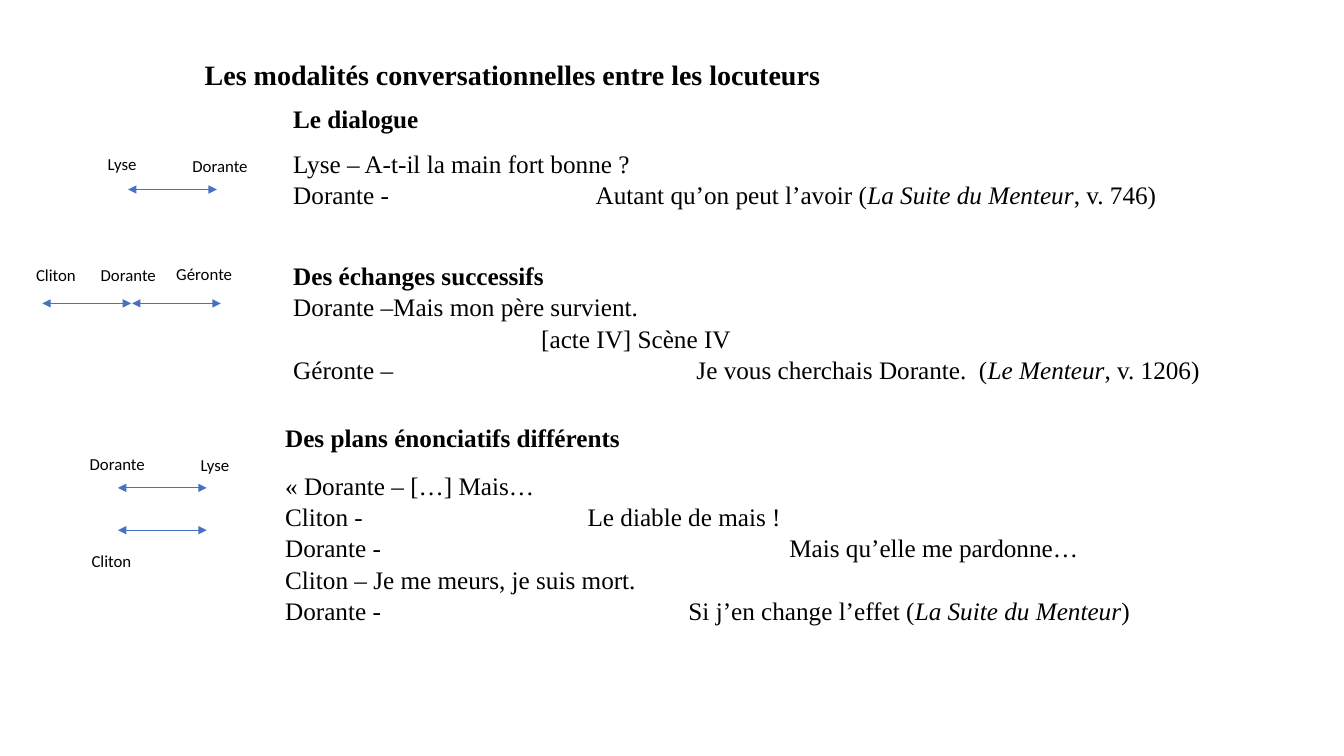
from lxml import etree
from pptx import Presentation
from pptx.dml.color import RGBColor
from pptx.enum.shapes import MSO_CONNECTOR
from pptx.enum.text import MSO_ANCHOR, MSO_AUTO_SIZE, PP_ALIGN
from pptx.oxml.ns import qn
from pptx.util import Pt

PX = 9144
STRAIGHT = MSO_CONNECTOR.STRAIGHT
TOP = MSO_ANCHOR.TOP
NO_FIT = MSO_AUTO_SIZE.NONE
LEFT, JUSTIFY = PP_ALIGN.LEFT, PP_ALIGN.JUSTIFY
COLORS = {"text": "000000", "arrow": "4472C4"}
SERIF, SANS = "Times New Roman", "Calibri"
TITLE = {"name": SERIF, "size": Pt(20), "bold": True}
HEADING = {"name": SERIF, "size": Pt(18), "bold": True}
BODY = {"name": SERIF, "size": Pt(18), "bold": False}
LABEL = {"name": SANS, "size": Pt(12), "bold": False}
TAB_STOPS = range(100, 600, 100)
ARROW_LENGTH = 88

DIALOGUE = [
    ("Lyse – A-t-il la main fort bonne ?", BODY),
    ("Dorante - \t\tAutant qu’on peut l’avoir (*La Suite du Menteur*, v. 746)", BODY),
]
EXCHANGES = [
    ("Des échanges successifs", HEADING),
    ("Dorante –Mais mon père survient.", BODY),
    ("[acte IV] Scène IV ", BODY),
    ("Géronte – \t\t\tJe vous cherchais Dorante.  (*Le Menteur*, v. 1206)", BODY),
]
PLANES = [
    ("« Dorante – […] Mais…", BODY),
    ("Cliton -\t\t\tLe diable de mais !", BODY),
    ("Dorante -\t\t\t\t\tMais qu’elle me pardonne…", BODY),
    ("Cliton – Je me meurs, je suis mort. ", BODY),
    ("Dorante -\t\t\t\tSi j’en change l’effet (*La Suite du Menteur*)", BODY),
]
LABELS = [
    ("Lyse", 97, 148, 49), ("Dorante", 181, 150, 75),
    ("Cliton", 26, 258, 60), ("Dorante", 90, 258, 75), ("Géronte", 165, 257, 76),
    ("Dorante", 79, 445, 75), ("Lyse", 189, 446, 49), ("Cliton", 81, 541, 60),
]
ARROWS = [(127, 188), (42, 301), (131, 301), (117, 484), (117, 526)]


def set_attributes(target, values):
    for name, value in values.items():
        setattr(target, name, value)


def place(sp, left, top, width, height):
    set_attributes(sp, {"left": left * PX, "top": top * PX,
                        "width": width * PX, "height": height * PX})


def add_tab_stops(p):
    tabs = etree.SubElement(p._p.get_or_add_pPr(), qn("a:tabLst"))
    for stop in TAB_STOPS:
        etree.SubElement(tabs, qn("a:tab"), pos=str(stop * PX), algn="l")


def write_paragraph(p, text, font, align, spacing):
    set_attributes(p, {"alignment": align, "line_spacing": spacing})
    if "\t" in text:
        add_tab_stops(p)
    for i, part in enumerate(text.split("*")):
        r = p.add_run()
        r.text = part
        set_attributes(r.font, {**font, "italic": i % 2 == 1})
        r.font.color.rgb = RGBColor.from_string(COLORS["text"])


def write_text(sp, lines, align=LEFT, wrap=False, spacing=1.0):
    tf = sp.text_frame
    set_attributes(tf, {
        "word_wrap": wrap, "auto_size": NO_FIT, "vertical_anchor": TOP,
        "margin_left": 10 * PX, "margin_right": 10 * PX,
        "margin_top": 5 * PX, "margin_bottom": 5 * PX,
    })
    for i, (text, font) in enumerate(lines):
        p = tf.add_paragraph() if i else tf.paragraphs[0]
        write_paragraph(p, text, font, align, spacing)


def add_text(s, box, lines, **layout):
    sp = s.shapes.add_textbox(*(v * PX for v in box))
    write_text(sp, lines, **layout)
    return sp


def add_double_arrow(s, left, top):
    line = s.shapes.add_connector(STRAIGHT, left * PX, top * PX,
                                  (left + ARROW_LENGTH) * PX, top * PX)
    line.line.color.rgb = RGBColor.from_string(COLORS["arrow"])
    line.line.width = Pt(0.5)
    ln = line.line._get_or_add_ln()
    for end in ("a:headEnd", "a:tailEnd"):
        etree.SubElement(ln, qn(end), type="triangle")
    etree.SubElement(line._element.spPr, qn("a:effectLst"))


def main():
    prs = Presentation()
    prs.slide_width, prs.slide_height = 1333 * PX, 750 * PX
    s = prs.slides.add_slide(prs.slide_layouts[5])

    title = s.shapes.title
    place(title, 193, 52, 642, 44)
    write_text(title, [("Les modalités conversationnelles entre les locuteurs", TITLE)])

    add_text(s, (281, 98, 146, 40), [("Le dialogue", HEADING)])
    add_text(s, (281, 141, 879, 71), DIALOGUE, spacing=1.04)
    exchanges = add_text(s, (281, 252, 1040, 162), EXCHANGES,
                         align=JUSTIFY, wrap=True, spacing=1.04)
    scene = exchanges.text_frame.paragraphs[2]._p.get_or_add_pPr()
    scene.set("marL", str(197 * PX))
    scene.set("indent", str(49 * PX))
    add_text(s, (273, 414, 356, 71), [("Des plans énonciatifs différents", HEADING)])
    add_text(s, (273, 460, 925, 162), PLANES, align=JUSTIFY, wrap=True, spacing=1.04)

    for text, left, top, width in LABELS:
        add_text(s, (left, top, width, 30), [(text, LABEL)])
    for left, top in ARROWS:
        add_double_arrow(s, left, top)
    prs.save("out.pptx")


if __name__ == "__main__":
    main()
